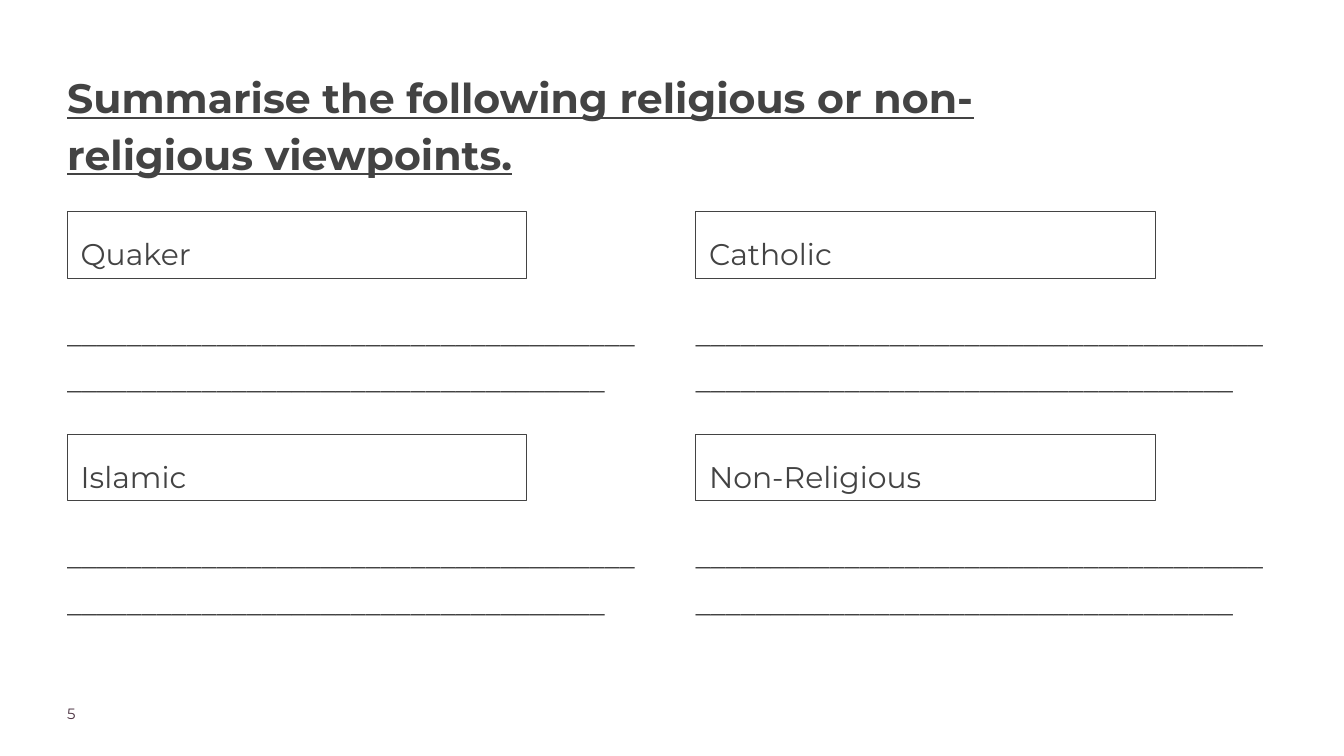
import pptx
import pptx.util
import pptx.dml.color
import pptx.enum.shapes
import pptx.enum.text
from dataclasses import dataclass
from pptx.util import Cm


@dataclass(frozen=True)
class Theme:
    font: str = "Montserrat"
    ink: str = "434343"
    page_ink: str = "4B3241"
    paper: str = "FFFFFF"
    title_size: int = 44
    body_size: int = 32
    page_size: int = 16


theme = Theme()


def rgb(value):
    return pptx.dml.color.RGBColor.from_string(value)


def write(holder, text, size, color, spacing=1.0, inset=0, bold=False):
    frame = holder.text_frame
    frame.word_wrap = True
    frame.auto_size = pptx.enum.text.MSO_AUTO_SIZE.NONE
    frame.vertical_anchor = pptx.enum.text.MSO_ANCHOR.TOP
    frame.margin_left = frame.margin_right = Cm(inset)
    frame.margin_top = frame.margin_bottom = Cm(inset)
    paragraph = frame.paragraphs[0]
    paragraph.alignment = pptx.enum.text.PP_ALIGN.LEFT
    paragraph.line_spacing = spacing
    paragraph.space_before = pptx.util.Pt(0)
    run = paragraph.add_run()
    run.text = text
    run.font.name = theme.font
    run.font.size = pptx.util.Pt(size)
    run.font.color.rgb = rgb(color)
    run.font.bold = bold
    run.font.underline = bold
    return paragraph


deck = pptx.Presentation()
deck.slide_width = Cm(50.8)
deck.slide_height = Cm(28.58)
slide = deck.slides.add_slide(deck.slide_layouts[5])
slide.background.fill.solid()
slide.background.fill.fore_color.rgb = rgb(theme.paper)

task = slide.shapes.title
task.left, task.top, task.width, task.height = Cm(2.54), Cm(2.46), Cm(36.68), Cm(4.52)
write(task, "Summarise the following religious or non-religious viewpoints.",
      theme.title_size, theme.ink, spacing=1.15, bold=True)

left, column_step = 2.54, 23.75
top, row_step = 8, 8.41
answer_offset = 3.51
viewpoints = ["Quaker", "Catholic", "Islamic", "Non-Religious"]

for index, viewpoint in enumerate(viewpoints):
    row, column = divmod(index, 2)
    x = left + column * column_step
    y = top + row * row_step

    heading = slide.shapes.add_shape(pptx.enum.shapes.MSO_SHAPE.RECTANGLE,
                                     Cm(x), Cm(y), Cm(17.37), Cm(2.51))
    heading.shadow.inherit = False
    heading.fill.solid()
    heading.fill.fore_color.rgb = rgb(theme.paper)
    heading.line.color.rgb = rgb(theme.ink)
    heading.line.width = pptx.util.Pt(0.75)
    write(heading, viewpoint, theme.body_size, theme.ink, spacing=1.3, inset=0.51)

    answer = slide.shapes.add_textbox(Cm(x), Cm(y + answer_offset), Cm(21.95), Cm(3.51))
    blank = write(answer, "_" * 74, theme.body_size, theme.ink, spacing=1.3)
    blank.space_after = pptx.util.Pt(20)

page_number = slide.shapes.add_textbox(Cm(left), Cm(26.62), Cm(3.99), Cm(0.99))
write(page_number, "5", theme.page_size, theme.page_ink)

deck.save("out.pptx")
